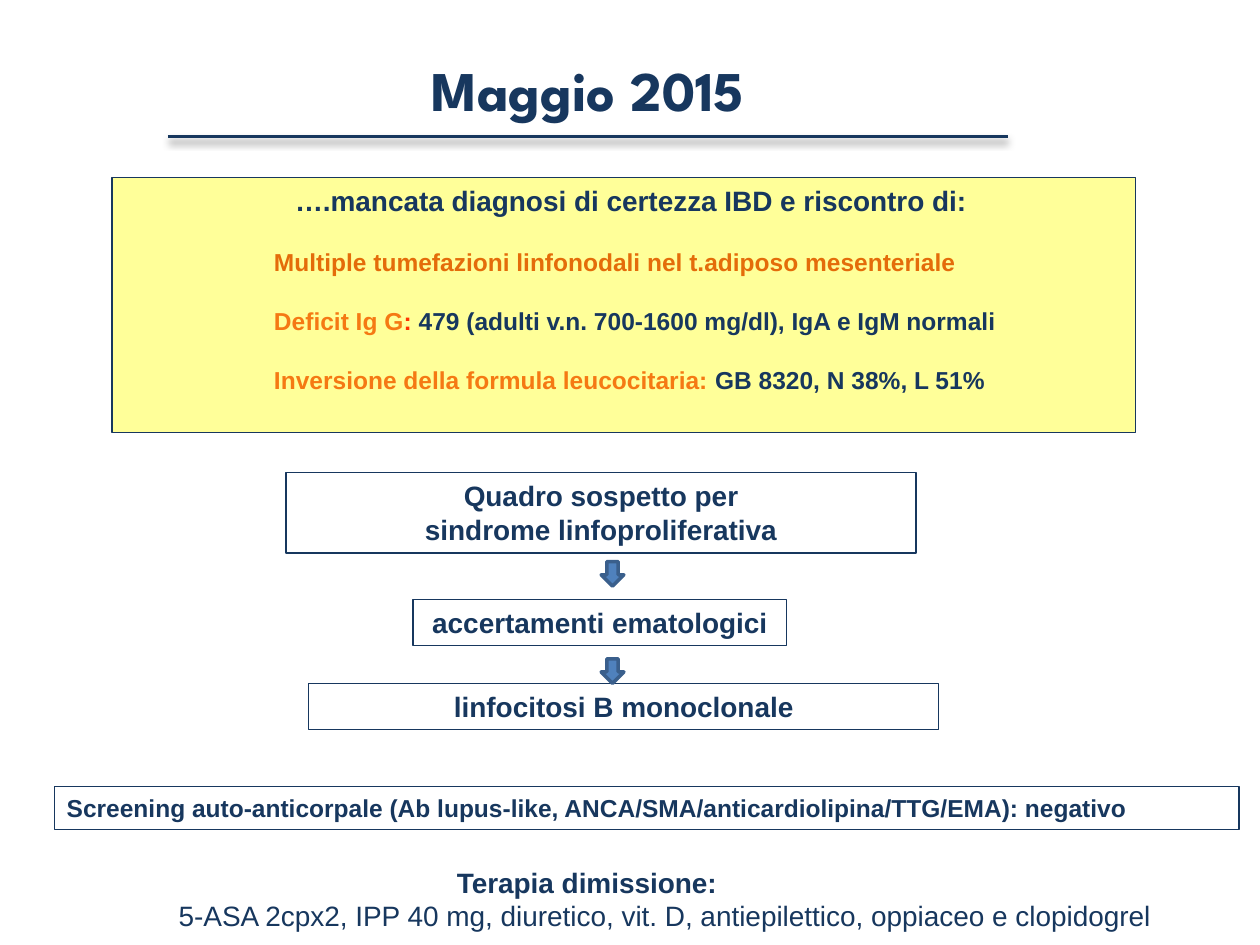
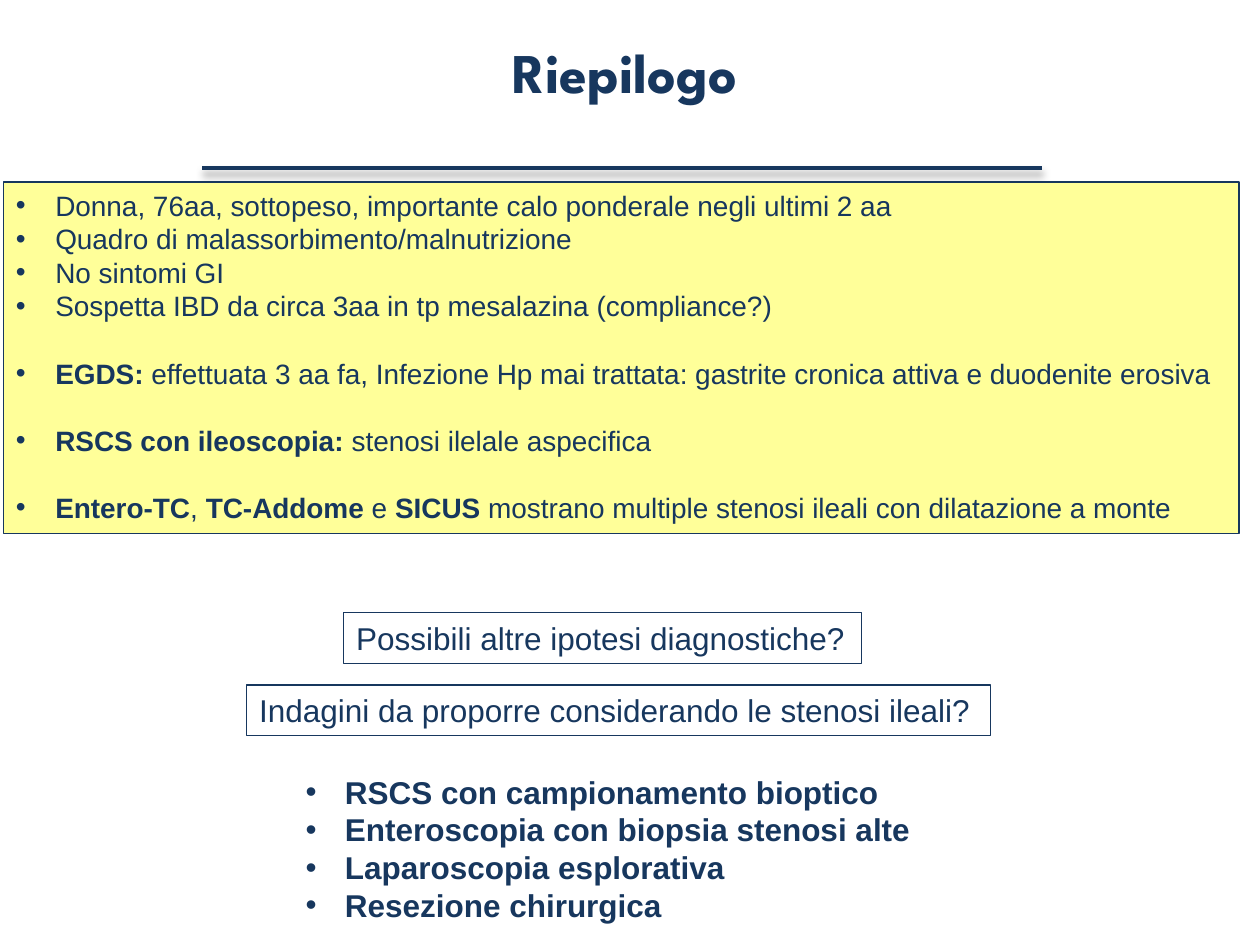
from lxml.etree import SubElement
from pptx import Presentation
from pptx.dml.color import RGBColor
from pptx.enum.shapes import MSO_CONNECTOR, MSO_SHAPE
from pptx.enum.text import MSO_ANCHOR, MSO_AUTO_SIZE, PP_ALIGN
from pptx.oxml.ns import qn
from pptx.util import Pt

NAVY = "17375E"
YELLOW = "FFFF99"
ORANGE = "F57913"
RUST = "E46C0A"
RED = "FF3300"
BLUE = "4F81BD"
STEEL = "3A5F8C"
BODY = "Arial"
HEAD = "League Spartan"
LEAD = 1.2     # line height per point of text
HANG = 22.5    # bullet indent


def color(code):
    return RGBColor.from_string(code)


def style(run, size, bold, code=NAVY, name=BODY):
    font = run.font
    font.name, font.size, font.bold = name, Pt(size), bold
    font.color.rgb = color(code)


def para(text, bold=False, size=None, gap=0, left=0):
    """One paragraph; text is a string or a list of (text, bold, colour)."""
    parts = [(text, bold, NAVY)] if isinstance(text, str) else text
    return {"parts": parts, "size": size, "gap": gap, "left": left}


def indent(item, left, first=0):
    props = item._p.get_or_add_pPr()
    props.set("marL", str(Pt(left)))
    props.set("indent", str(Pt(first)))
    return props


def bullet(item):
    props = indent(item, HANG, -HANG)
    SubElement(props, qn("a:buFont"), typeface=BODY)
    SubElement(props, qn("a:buChar"), char="•")


def write(frame, paras, size, align=PP_ALIGN.LEFT, dots=False):
    frame.word_wrap = True
    frame.auto_size = MSO_AUTO_SIZE.NONE
    frame.vertical_anchor = MSO_ANCHOR.TOP
    for i, spec_ in enumerate(paras):
        item = frame.paragraphs[0] if i == 0 else frame.add_paragraph()
        if dots:
            bullet(item)
        elif spec_["left"]:
            indent(item, spec_["left"])
        pts = spec_["size"] or size
        item.alignment = align
        item.line_spacing = Pt(pts * LEAD)
        item.space_before = Pt(spec_["gap"])
        for text, bold, code in spec_["parts"]:
            run = item.add_run()
            run.text = text
            style(run, pts, bold, code)


def panel(slide, area, paras, size, fill=None, **look):
    """Outlined text rectangle, filled or clear."""
    box = slide.shapes.add_shape(MSO_SHAPE.RECTANGLE, *map(Pt, area))
    box.shadow.inherit = False
    if fill:
        box.fill.solid()
        box.fill.fore_color.rgb = color(fill)
    else:
        box.fill.background()
    box.line.color.rgb = color(NAVY)
    box.line.width = Pt(0.75)
    write(box.text_frame, paras, size, **look)


def label(slide, area, paras, size, **look):
    box = slide.shapes.add_textbox(*map(Pt, area))
    write(box.text_frame, paras, size, **look)


def arrow(slide, left, top):
    mark = slide.shapes.add_shape(
        MSO_SHAPE.DOWN_ARROW, Pt(left), Pt(top), Pt(13), Pt(14))
    mark.shadow.inherit = False
    mark.fill.solid()
    mark.fill.fore_color.rgb = color(BLUE)
    mark.line.color.rgb = color(STEEL)
    mark.line.width = Pt(2)


def rule(slide, left, top):
    """Title rule with a soft shadow below."""
    line = slide.shapes.add_connector(
        MSO_CONNECTOR.STRAIGHT, Pt(left), Pt(top), Pt(left + 480), Pt(top))
    line.line.color.rgb = color(NAVY)
    line.line.width = Pt(2.25)
    effect = SubElement(line._element.spPr, qn("a:effectLst"))
    shade = SubElement(effect, qn("a:outerShdw"), blurRad=str(Pt(4)),
                       dist=str(Pt(3)), dir="5400000", rotWithShape="0")
    black = SubElement(shade, qn("a:srgbClr"), val="000000")
    SubElement(black, qn("a:alpha"), val="40000")


def start(deck, text, left, top, line):
    """New slide with its title and rule."""
    slide = deck.slides.add_slide(deck.slide_layouts[5])
    title = slide.shapes.title
    title.left, title.top = Pt(left), Pt(top)
    title.width, title.height = Pt(642), Pt(46)
    frame = title.text_frame
    frame.text = text
    frame.auto_size = MSO_AUTO_SIZE.NONE
    frame.vertical_anchor = MSO_ANCHOR.TOP
    frame.paragraphs[0].alignment = PP_ALIGN.CENTER
    style(frame.paragraphs[0].runs[0], 32, True, name=HEAD)
    rule(slide, *line)
    return slide


def may(deck):
    slide = start(deck, "Maggio 2015", 15, 28, (96, 78))
    mid = PP_ALIGN.CENTER

    # Findings
    row = {"gap": 14 * LEAD, "left": 85.5}
    panel(slide, (64, 101.5, 585, 145.5), [
        para("….mancata diagnosi di certezza IBD e riscontro di:",
             True, 16, left=97.5),
        para([("Multiple tumefazioni linfonodali nel t.adiposo mesenteriale",
               True, RUST)], **row),
        para([("Deficit Ig G", True, ORANGE), (": ", True, RED),
              ("479 (adulti v.n. 700-1600 mg/dl), IgA e IgM normali",
               True, NAVY)], **row),
        para([("Inversione della formula leucocitaria: ", True, ORANGE),
              ("GB 8320, N 38%, L 51%", True, NAVY)], **row),
    ], 14, YELLOW)

    # Path to the diagnosis
    steps = [
        ((163.5, 270, 360, 46),
         ["Quadro sospetto per", "sindrome linfoproliferativa"]),
        ((236, 342.5, 213.5, 26.5), ["accertamenti ematologici"]),
        ((176.5, 390.5, 360, 26.5), ["linfocitosi B monoclonale"]),
    ]
    for area, lines in steps:
        panel(slide, area, [para(t, True) for t in lines], 16, align=mid)
    for top in (321, 376.5):
        arrow(slide, 343.5, top)

    # Screening and therapy
    panel(slide, (31, 449.5, 677, 24.5), [para(
        "Screening auto-anticorpale (Ab lupus-like, "
        "ANCA/SMA/anticardiolipina/TTG/EMA): negativo", True)], 14)
    label(slide, (91, 491, 620, 46), [
        para("Terapia dimissione:", True, left=163),
        para("5-ASA 2cpx2, IPP 40 mg, diuretico, vit. D, "
             "antiepilettico, oppiaceo e clopidogrel", left=4),
    ], 16)


def recap(deck):
    slide = start(deck, "Riepilogo", 36, 18, (115.5, 96))

    # Case history
    facts = [
        "Donna, 76aa, sottopeso, importante calo ponderale negli ultimi 2 aa",
        "Quadro di malassorbimento/malnutrizione",
        "No sintomi GI",
        "Sospetta IBD da circa 3aa in tp mesalazina (compliance?)",
    ]
    exams = [
        [("EGDS:", True, NAVY),
         (" effettuata 3 aa fa, Infezione Hp mai trattata: gastrite cronica "
          "attiva e duodenite erosiva", False, NAVY)],
        [("RSCS con ileoscopia: ", True, NAVY),
         ("stenosi ilelale aspecifica", False, NAVY)],
        [("Entero-TC", True, NAVY), (", ", False, NAVY),
         ("TC-Addome", True, NAVY), (" e ", False, NAVY),
         ("SICUS", True, NAVY),
         (" mostrano multiple stenosi ileali con dilatazione a monte",
          False, NAVY)],
    ]
    panel(slide, (2, 104, 706, 201),
          [para(t) for t in facts] + [para(t, gap=16 * LEAD) for t in exams],
          16, YELLOW, dots=True)

    # Questions
    panel(slide, (196.5, 350, 296, 29),
          [para("Possibili altre ipotesi diagnostiche?")], 18)
    panel(slide, (141, 391.5, 425, 29),
          [para("Indagini da proporre considerando le stenosi ileali?")], 18)

    # Proposals
    plans = ["RSCS con campionamento bioptico",
             "Enteroscopia con biopsia stenosi alte",
             "Laparoscopia esplorativa", "Resezione chirurgica"]
    label(slide, (167.5, 438, 364, 94), [para(t, True) for t in plans],
          18, dots=True)


def main():
    deck = Presentation()
    deck.slide_width, deck.slide_height = Pt(720), Pt(540)
    may(deck)
    recap(deck)
    deck.save("out.pptx")


if __name__ == "__main__":
    main()
